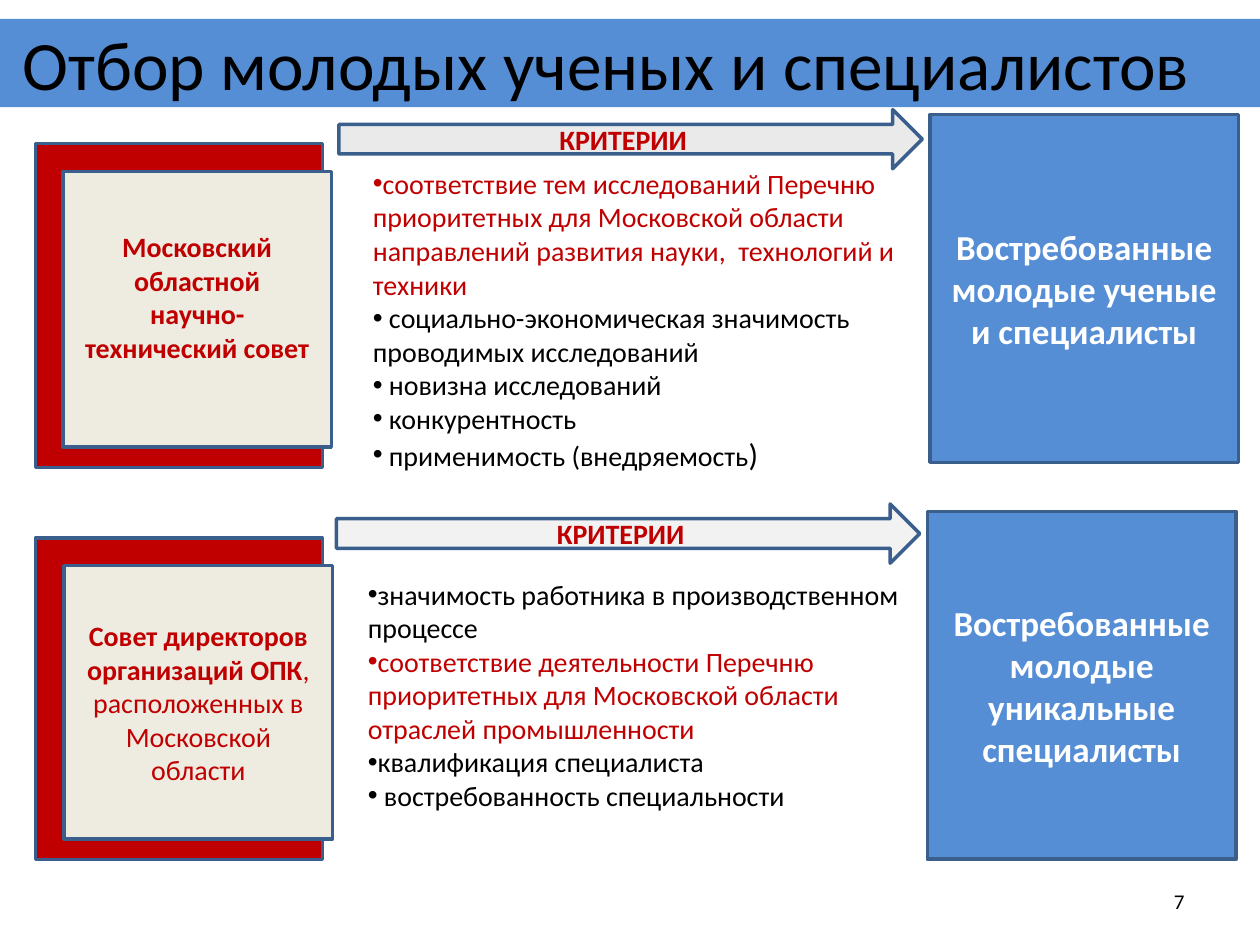
from dataclasses import dataclass

from lxml import etree
from pptx import Presentation
from pptx.dml.color import RGBColor
from pptx.enum.shapes import MSO_SHAPE
from pptx.enum.text import MSO_ANCHOR, MSO_AUTO_SIZE, PP_ALIGN
from pptx.oxml.ns import qn
from pptx.util import Inches, Pt

RECTANGLE, ARROW = MSO_SHAPE.RECTANGLE, MSO_SHAPE.RIGHT_ARROW
LEFT, CENTER, RIGHT = PP_ALIGN.LEFT, PP_ALIGN.CENTER, PP_ALIGN.RIGHT
TOP, MIDDLE = MSO_ANCHOR.TOP, MSO_ANCHOR.MIDDLE
NO_AUTOFIT = MSO_AUTO_SIZE.NONE

FONT = "Calibri"
TWO_CONTENT_LAYOUT = 3
COLORS = {
    "blue": "558ED5",
    "outline": "3A5F8C",
    "red": "C00000",
    "cream": "EEECE1",
    "gray": "BFBFBF",
    "light_gray": "D9D9D9",
    "black": "000000",
    "white": "FFFFFF",
}


@dataclass
class Span:
    text: str
    color: str = "black"
    size: float = 16
    bold: bool = False


@dataclass
class Box:
    left: float
    top: float
    width: float
    height: float


@dataclass
class Selection:
    """One row: who selects, by which criteria, and who is selected."""
    backing: Box
    council_box: Box
    council: list[list[Span]]
    council_bottom_inset: float
    arrow_box: Box
    arrow_color: str
    criteria_box: Box
    criteria: list[list[Span]]
    result_box: Box
    result: str


def red_bold(text: str) -> Span:
    return Span(text, "red", bold=True)


SELECTIONS = [
    Selection(
        backing=Box(0.28, 1.14, 2.28, 2.57),
        council_box=Box(0.5, 1.36, 2.13, 2.19),
        council=[[red_bold("Московский областной")],
                 [red_bold("научно-технический совет")]],
        council_bottom_inset=0.25,
        arrow_box=Box(2.69, 0.87, 4.63, 0.47),
        arrow_color="gray",
        criteria_box=Box(2.86, 1.27, 4.45, 2.56),
        criteria=[
            [Span("соответствие тем исследований Перечню приоритетных для Московской "
                  "области направлений развития науки,  технологий и техники", "red")],
            [Span(" социально-экономическая значимость проводимых исследований")],
            [Span(" новизна исследований")],
            [Span(" конкурентность")],
            [Span(" применимость (внедряемость"), Span(")", size=18)],
        ],
        result_box=Box(7.38, 0.91, 2.45, 2.76),
        result="Востребованные молодые ученые и специалисты",
    ),
    Selection(
        backing=Box(0.28, 4.27, 2.28, 2.55),
        council_box=Box(0.51, 4.49, 2.13, 2.17),
        council=[[red_bold("Совет директоров организаций ОПК"),
                  Span(", расположенных в Московской области", "red")]],
        council_bottom_inset=0.05,
        arrow_box=Box(2.67, 4, 4.63, 0.47),
        arrow_color="light_gray",
        criteria_box=Box(2.82, 4.53, 4.45, 1.99),
        criteria=[
            [Span("значимость работника в производственном процессе")],
            [Span("соответствие деятельности Перечню приоритетных для Московской "
                  "области отраслей промышленности", "red")],
            [Span("квалификация специалиста")],
            [Span(" востребованность специальности")],
        ],
        result_box=Box(7.36, 4.06, 2.45, 2.76),
        result="Востребованные молодые уникальные специалисты",
    ),
]


def rgb(name: str) -> RGBColor:
    return RGBColor.from_string(COLORS[name])


def place(shape, box: Box) -> None:
    shape.left, shape.top = Inches(box.left), Inches(box.top)
    shape.width, shape.height = Inches(box.width), Inches(box.height)


def set_bullet(paragraph) -> None:
    """Put a bullet directly before the text, with no hanging indent."""
    properties = paragraph._p.get_or_add_pPr()
    properties.set("marL", "0")
    properties.set("indent", "0")
    etree.SubElement(properties, qn("a:buFont")).set("typeface", "Arial")
    etree.SubElement(properties, qn("a:buChar")).set("char", "•")


def write(shape, paragraphs: list[list[Span]], *, align=CENTER, anchor=MIDDLE,
          bulleted: bool = False, left_inset: float = 0.1,
          bottom_inset: float = 0.05) -> None:
    frame = shape.text_frame
    frame.word_wrap = True
    frame.auto_size = NO_AUTOFIT
    frame.vertical_anchor = anchor
    frame.margin_left = Inches(left_inset)
    frame.margin_bottom = Inches(bottom_inset)
    for index, spans in enumerate(paragraphs):
        paragraph = frame.add_paragraph() if index else frame.paragraphs[0]
        paragraph.alignment = align
        paragraph.space_before = Pt(0)
        if bulleted:
            set_bullet(paragraph)
        for span in spans:
            run = paragraph.add_run()
            run.text = span.text
            run.font.name = FONT
            run.font.size = Pt(span.size)
            run.font.bold = span.bold
            run.font.color.rgb = rgb(span.color)


def add_panel(slide, box: Box, fill: str, kind=RECTANGLE, opacity: int = 100):
    panel = slide.shapes.add_shape(kind, Inches(box.left), Inches(box.top),
                                   Inches(box.width), Inches(box.height))
    panel.shadow.inherit = False
    panel.fill.solid()
    panel.fill.fore_color.rgb = rgb(fill)
    panel.line.color.rgb = rgb("outline")
    panel.line.width = Pt(2)
    if opacity < 100:
        color = panel._element.spPr.find(f"{qn('a:solidFill')}/{qn('a:srgbClr')}")
        etree.SubElement(color, qn("a:alpha")).set("val", str(opacity * 1000))
    return panel


def draw_selection(slide, selection: Selection, criteria_list) -> None:
    add_panel(slide, selection.backing, "red")
    council = add_panel(slide, selection.council_box, "cream")
    write(council, selection.council, bottom_inset=selection.council_bottom_inset)
    result = add_panel(slide, selection.result_box, "blue")
    write(result, [[Span(selection.result, "white", 20, True)]])
    arrow = add_panel(slide, selection.arrow_box, selection.arrow_color, ARROW, 32)
    write(arrow, [[red_bold("КРИТЕРИИ")]])
    place(criteria_list, selection.criteria_box)
    write(criteria_list, selection.criteria, align=LEFT, anchor=TOP, bulleted=True)


def main() -> None:
    deck = Presentation()
    deck.slide_width, deck.slide_height = Inches(10), Inches(7.5)
    slide = deck.slides.add_slide(deck.slide_layouts[TWO_CONTENT_LAYOUT])

    title, *criteria_lists = slide.placeholders
    place(title, Box(0, 0.15, 10, 0.7))
    title.fill.solid()
    title.fill.fore_color.rgb = rgb("blue")
    write(title, [[Span("Отбор молодых ученых и специалистов", size=39.6)]],
          align=LEFT, left_inset=0.18)

    for selection, criteria_list in zip(SELECTIONS, criteria_lists):
        draw_selection(slide, selection, criteria_list)

    page_number = slide.shapes.add_textbox(0, 0, 0, 0)
    place(page_number, Box(7.17, 6.95, 2.33, 0.4))
    write(page_number, [[Span("7", size=12)]], align=RIGHT)
    deck.save("out.pptx")


if __name__ == "__main__":
    main()
